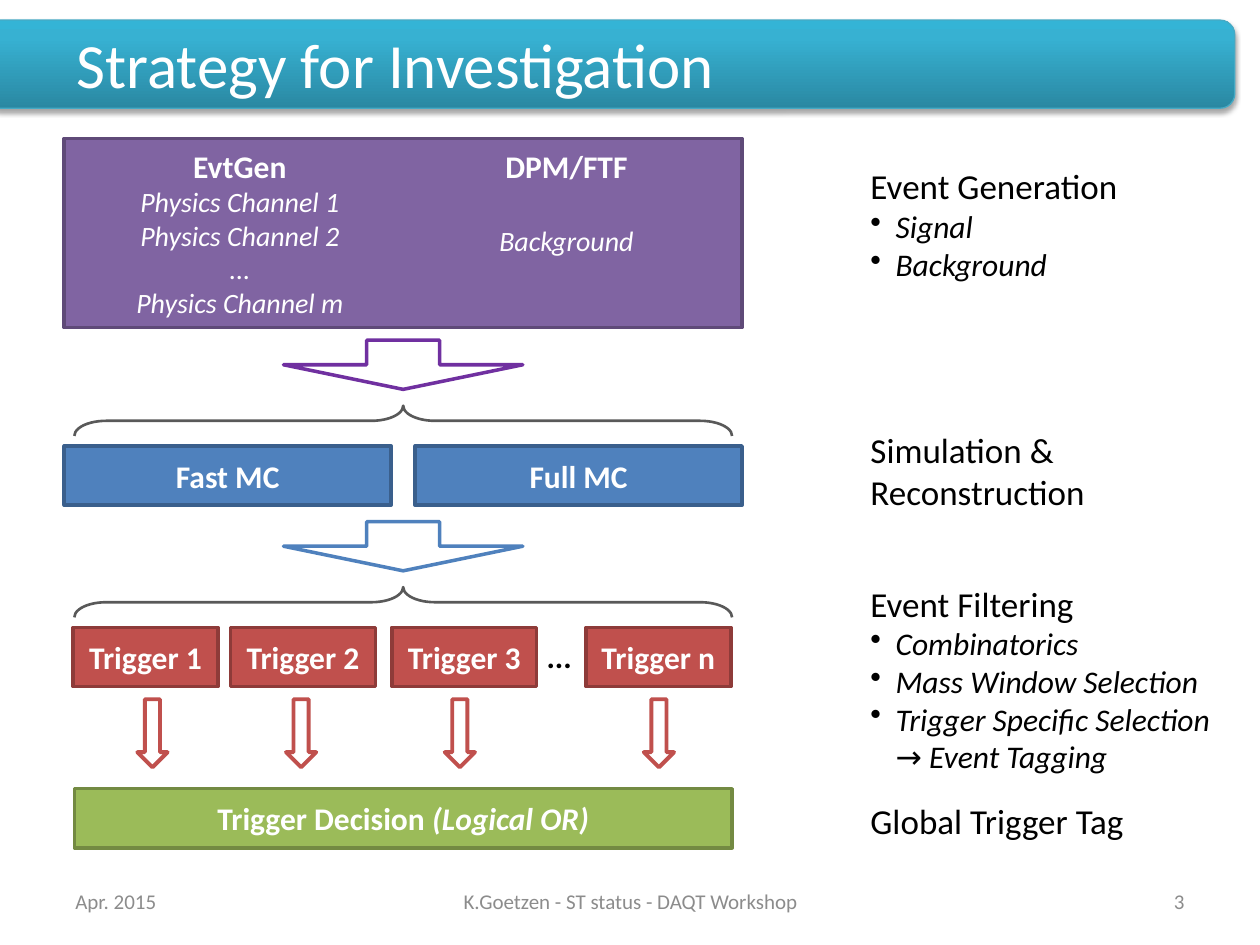
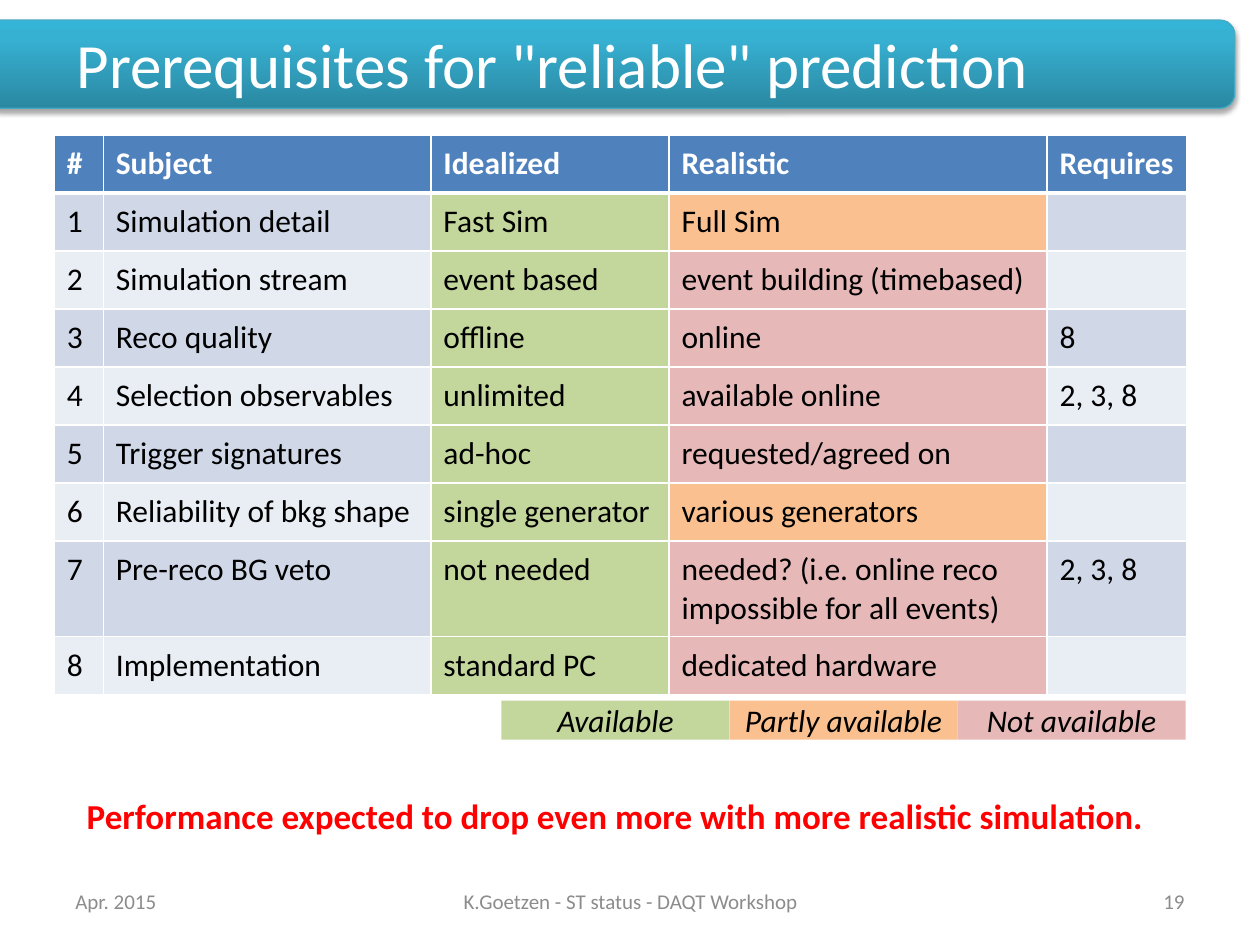
from lxml import etree
from pptx import Presentation
from pptx.dml.color import RGBColor
from pptx.enum.shapes import MSO_SHAPE
from pptx.enum.text import MSO_ANCHOR, PP_ALIGN
from pptx.oxml import parse_xml
from pptx.oxml.ns import nsdecls, qn
from pptx.util import Inches, Pt

COLORS = {
    "white": "FFFFFF", "black": "000000", "red": "FF0000", "footer": "8C8C8C",
    "band_dark": "2A88A2", "band_mid": "37B1D2", "band_light": "34B4D6", "band_line": "46AAC5",
    "purple": "8064A2", "purple_line": "5F4A78", "violet": "7030A0",
    "blue": "4F81BD", "blue_line": "3A5F8C",
    "brick": "C0504D", "brick_line": "8E3B39",
    "green": "9BBB59", "green_line": "738A42", "brace": "595959",
    "row_odd": "D0D8E8", "row_even": "E9EDF4",
    "available": "C3D69B", "partly": "FAC090", "missing": "E6B9B8",
}
FONT = "Calibri"
CENTER = PP_ALIGN.CENTER


def rgb(name):
    return RGBColor.from_string(COLORS[name])


def set_font(font, size, color, bold=False, italic=False):
    font.name, font.size, font.bold, font.italic = FONT, Pt(size), bold, italic
    font.color.rgb = rgb(color)


def write(para, text, size=18, color="white", bold=False, italic=False, align=None):
    para.text = text
    para.alignment = align
    set_font(para.font, size, color, bold, italic)


def next_para(frame):
    """Return the first paragraph while it is empty, then new ones."""
    first = frame.paragraphs[0]
    return frame.add_paragraph() if first.runs else first


def add_bullet(para):
    properties = para._p.get_or_add_pPr()
    properties.set("marL", str(Inches(0.2)))
    properties.set("indent", str(-Inches(0.2)))
    bullet = parse_xml(f'<a:buChar {nsdecls("a")} char="•"/>')
    properties.insert_element_before(bullet, "a:tabLst", "a:defRPr", "a:extLst")


def add_box(shapes, kind, box, fill=None, line=None, width=2.0):
    shape = shapes.add_shape(kind, *map(Inches, box))
    shape.shadow.inherit = False
    if fill:
        shape.fill.solid()
        shape.fill.fore_color.rgb = rgb(fill)
    else:
        shape.fill.background()
    if line:
        shape.line.color.rgb = rgb(line)
        shape.line.width = Pt(width)
    else:
        shape.line.fill.background()
    shape.text_frame.vertical_anchor = MSO_ANCHOR.MIDDLE
    return shape


def add_label_box(shapes, box, text, fill, line=None, **style):
    shape = add_box(shapes, MSO_SHAPE.RECTANGLE, box, fill, line)
    write(shape.text_frame.paragraphs[0], text, align=CENTER, **style)
    return shape


def add_text(page, box, text, size, color, wrap=True, anchor=MSO_ANCHOR.TOP, **style):
    frame = page.shapes.add_textbox(*map(Inches, box)).text_frame
    frame.word_wrap = wrap
    frame.vertical_anchor = anchor
    write(frame.paragraphs[0], text, size, color, **style)
    return frame


# Parts shared by the slides
def add_band(page, box):
    band = add_box(page.shapes, MSO_SHAPE.ROUNDED_RECTANGLE, box, line="band_line", width=0.75)
    stops = "".join(
        f'<a:gs pos="{place * 1000}"><a:srgbClr val="{COLORS[name]}"/></a:gs>'
        for place, name in ((0, "band_dark"), (80, "band_mid"), (100, "band_light")))
    gradient = parse_xml(f'<a:gradFill {nsdecls("a")} rotWithShape="1"><a:gsLst>{stops}</a:gsLst>'
                         '<a:lin ang="16200000" scaled="0"/></a:gradFill>')
    properties = band._element.spPr
    properties.replace(properties.find(qn("a:noFill")), gradient)
    shadow = etree.SubElement(
        properties.find(qn("a:effectLst")), qn("a:outerShdw"),
        blurRad=str(Pt(3.1)), dist=str(Pt(1.8)), dir="5400000", rotWithShape="0")
    tint = etree.SubElement(shadow, qn("a:srgbClr"), val=COLORS["black"])
    etree.SubElement(tint, qn("a:alpha"), val="35000")


def add_footer(page, number):
    footers = ((0.5, 2.33, "Apr. 2015", PP_ALIGN.LEFT),
               (3.42, 3.17, "K.Goetzen - ST status - DAQT Workshop", CENTER),
               (7.17, 2.33, str(number), PP_ALIGN.RIGHT))
    for left, width, text, align in footers:
        add_text(page, (left, 6.95, width, 0.4), text, 12, "footer",
                 anchor=MSO_ANCHOR.MIDDLE, align=align)


def add_page(deck, title, number):
    page = deck.slides.add_slide(deck.slide_layouts[6])
    add_band(page, (-0.12, 0.16, 9.92, 0.7))
    add_text(page, (0.51, 0.23, 8.99, 0.54), title, 36, "white", anchor=MSO_ANCHOR.MIDDLE)
    add_footer(page, number)
    return page


# Regions of the strategy diagram
def add_generators(page, box):
    shape = add_box(page.shapes, MSO_SHAPE.RECTANGLE, box, "purple", "purple_line")
    frame = shape.text_frame
    frame._txBody.bodyPr.set("numCol", "2")
    columns = (("EvtGen", "Physics Channel 1", "Physics Channel 2", "...", "Physics Channel m"),
               ("DPM/FTF", "Background"))
    for heading, *sources in columns:
        write(next_para(frame), heading, bold=True, align=CENTER)
        for source in sources:
            write(next_para(frame), source, 16, italic=True, align=CENTER)
    frame.paragraphs[-1].space_before = Pt(22)


def add_stage_link(page, center, stage_top, color):
    """Wide arrow and brace leading down to the stage that starts at stage_top."""
    arrow = add_box(page.shapes, MSO_SHAPE.DOWN_ARROW,
                    (center - 0.95, stage_top - 0.84, 1.9, 0.39), "white", color)
    arrow.adjustments[0] = 0.305
    width, length = 0.24, 5.22
    brace = add_box(page.shapes, MSO_SHAPE.LEFT_BRACE,
                    (center - width / 2, stage_top - 0.2 - length / 2, width, length),
                    line="brace", width=1.5)
    brace.rotation = 90
    brace.adjustments[0] = 1.05


def add_simulations(page, box):
    left, top, width, height = box
    gap = 0.19
    box_width = (width - gap) / 2
    for index, name in enumerate(("Fast MC", "Full MC")):
        add_label_box(page.shapes, (left + index * (box_width + gap), top, box_width, height),
                      name, "blue", "blue_line", bold=True)


def add_triggers(page, box):
    left, top, width, height = box
    # name, box offset, arrow offset
    triggers = (("1", 0, 0.51), ("2", 1.25, 1.69), ("3", 2.53, 2.95), ("n", 4.07, 4.53))
    for name, offset, arrow_offset in triggers:
        add_label_box(page.shapes, (left + offset, top, 1.15, height), f"Trigger {name}",
                      "brick", "brick_line", bold=True)
        add_box(page.shapes, MSO_SHAPE.DOWN_ARROW,
                (left + arrow_offset, top + 0.57, 0.24, 0.54), "white", "brick", 2.25)
    add_text(page, (left + 3.66, top + 0.03, 0.4, 0.4), "...", 18, "black", wrap=False, bold=True)


def add_decision(page, box):
    shape = add_label_box(page.shapes, box, "Trigger Decision ", "green", "green_line", bold=True)
    span = shape.text_frame.paragraphs[0].add_run()
    span.text = "(Logical OR)"
    span.font.italic = True


def add_stage_notes(page, left):
    notes = (
        (1.26, 2.18, 1.04, ["Event Generation"], ["Signal", "Background"]),
        (3.35, 1.98, 0.77, ["Simulation &", "Reconstruction"], []),
        (4.57, 3.06, 1.65, ["Event Filtering"],
         ["Combinatorics", "Mass Window Selection", "Trigger Specific Selection"]),
        (6.3, 2.23, 0.44, ["Global Trigger Tag"], []),
    )
    for top, width, height, headings, bullets in notes:
        frame = add_text(page, (left, top, width, height), headings[0], 20, "black",
                         wrap=width > 3)
        for heading in headings[1:]:
            write(next_para(frame), heading, 20, "black")
        for bullet in bullets:
            para = next_para(frame)
            write(para, bullet, 18, "black", italic=True)
            add_bullet(para)
        if "Combinatorics" in bullets:
            para.add_line_break()
            for text, font in (("→ ", "Cabin"), ("Event Tagging", FONT)):
                span = para.add_run()
                span.text = text
                span.font.name = font


def build_strategy(deck):
    page = add_page(deck, "Strategy for Investigation", 3)
    left, width = 0.51, 5.38
    center = left + width / 2
    add_generators(page, (left, 1.1, width, 1.5))
    add_stage_link(page, center, 3.54, "violet")
    add_simulations(page, (left, 3.54, width, 0.47))
    add_stage_link(page, center, 4.98, "blue")
    add_triggers(page, (0.58, 4.98, 5.22, 0.47))
    add_decision(page, (0.59, 6.26, 5.22, 0.47))
    add_stage_notes(page, 6.81)


# Regions of the prerequisites slide
HEADER = ("#", "Subject", "Idealized", "Realistic", "Requires")
PREREQUISITES = (
    ("Simulation detail", "Fast Sim", "Full Sim", "", "partly"),
    ("Simulation stream", "event based", "event building (timebased)", "", "missing"),
    ("Reco quality", "offline", "online", "8", "missing"),
    ("Selection observables", "unlimited", "available online", "2, 3, 8", "missing"),
    ("Trigger signatures", "ad-hoc", "requested/agreed on", "", "missing"),
    ("Reliability of bkg shape", "single generator", "various generators", "", "partly"),
    ("Pre-reco BG veto", "not needed", "needed? (i.e. online reco impossible for all events)",
     "2, 3, 8", "missing"),
    ("Implementation", "standard PC", "dedicated hardware", "", "missing"),
)


def set_borders(cell, top, bottom):
    properties = cell._tc.get_or_add_tcPr()
    for side, width in (("L", 1), ("R", 1), ("T", top), ("B", bottom)):
        line = etree.SubElement(properties, qn(f"a:ln{side}"), w=str(Pt(width)))
        fill = etree.SubElement(line, qn("a:solidFill"))
        etree.SubElement(fill, qn("a:srgbClr"), val=COLORS["white"])


def fill_cell(cell, text, fill, row):
    set_borders(cell, 3 if row == 1 else 1, 3 if row == 0 else 1)
    cell.fill.solid()
    cell.fill.fore_color.rgb = rgb(fill)
    cell.margin_left = cell.margin_right = Inches(0.1)
    cell.margin_top = cell.margin_bottom = Inches(0.08)
    write(cell.text_frame.paragraphs[0], text, color="black" if row else "white", bold=row == 0)


def add_prerequisites(page, left, top):
    widths, row_height = (0.39, 2.6, 1.89, 3, 1.11), 0.41
    rows = len(PREREQUISITES) + 1
    table = page.shapes.add_table(rows, len(widths), Inches(left), Inches(top),
                                  Inches(sum(widths)), Inches(rows * row_height)).table
    for column, width in zip(table.columns, widths):
        column.width = Inches(width)
    for column, text in enumerate(HEADER):
        fill_cell(table.cell(0, column), text, "blue", 0)
    for row, (*texts, status) in enumerate(PREREQUISITES, 1):
        stripe = "row_odd" if row % 2 else "row_even"
        fills = (stripe, stripe, "available", status, stripe)
        for column, (text, fill) in enumerate(zip((str(row), *texts), fills)):
            fill_cell(table.cell(row, column), text, fill, row)


def add_legend(page, box):
    left, top, width, height = box
    group = page.shapes.add_group_shape()
    entries = (("Available", "available"), ("Partly available", "partly"),
               ("Not available", "missing"))
    step = width / len(entries)
    for index, (text, fill) in enumerate(entries):
        add_label_box(group.shapes, (left + index * step, top, step, height), text, fill,
                      color="black", italic=True)


def build_prerequisites(deck):
    page = add_page(deck, 'Prerequisites for "reliable" prediction', 19)
    add_prerequisites(page, 0.43, 1.07)
    add_legend(page, (3.98, 5.56, 5.43, 0.31))
    add_text(page, (0.59, 6.26, 8.66, 0.44),
             "Performance expected to drop even more with more realistic simulation.",
             20, "red", wrap=False, bold=True)


def main():
    deck = Presentation()
    deck.slide_width, deck.slide_height = Inches(10), Inches(7.5)
    build_strategy(deck)
    build_prerequisites(deck)
    deck.save("out.pptx")


if __name__ == "__main__":
    main()
